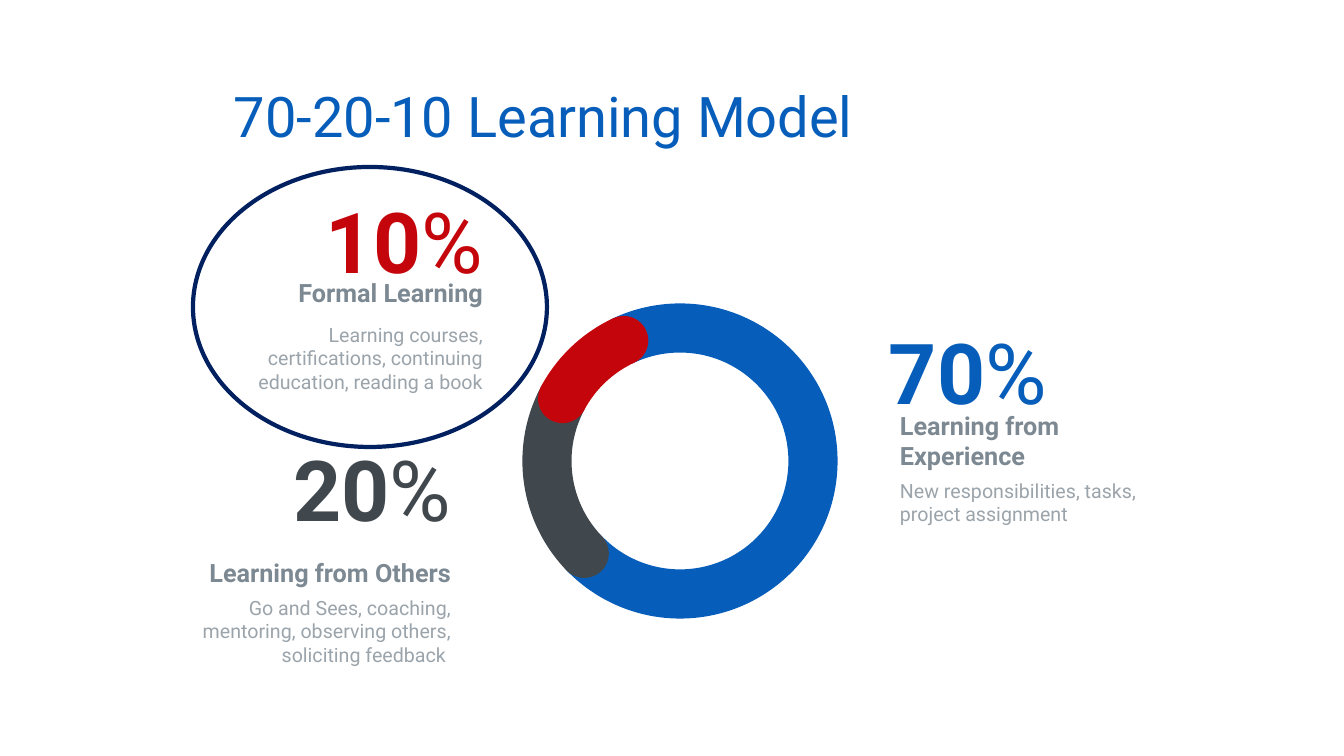
from math import cos, radians, sin, tan

from lxml import etree
from pptx import Presentation
from pptx import util as u
from pptx.dml.color import RGBColor
from pptx.enum import shapes, text
from pptx.oxml.ns import qn

BLUE, RED, CHARCOAL, NAVY = "065DBA", "C5050C", "41484D", "002060"
HEADING_GREY, BODY_GREY = "7D8992", "9BA4AB"
LEFT, RIGHT = text.PP_ALIGN.LEFT, text.PP_ALIGN.RIGHT
TOP, MIDDLE, BOTTOM = text.MSO_ANCHOR.TOP, text.MSO_ANCHOR.MIDDLE, text.MSO_ANCHOR.BOTTOM

STAT_WIDTH = 259
RING_CENTRE = (680, 461)
RING_RADIUS = 133
RING_HALF_WIDTH = 23

# start and end angle in degrees, clockwise from the right; colour
RING_ARCS = [(245, 496, BLUE), (136, 208, CHARCOAL), (208, 245, RED)]

# number, colour, alignment, (left, top) of the number, heading and its
# (left, top, height), body and its (left, top, height)
STATS = [
    ("70", BLUE, LEFT, (889, 321), "Learning from Experience", (900, 404, 72),
     "New responsibilities, tasks, project assignment", (900, 473, 58)),
    ("20", CHARCOAL, RIGHT, (192, 438), "Learning from Others", (192, 521, 72),
     "Go and Sees, coaching, mentoring, observing others, soliciting feedback ",
     (192, 590, 82)),
    ("10", RED, RIGHT, (224, 190), "Formal Learning", (224, 273, 40),
     "Learning courses, certifications, continuing education, reading a book",
     (224, 317, 82)),
]


def px(length):
    """Turn slide pixels (100.8 to the inch) into EMU."""
    return u.Emu(round(length * 914400 / 100.8))


def colour(hex_string):
    return RGBColor.from_string(hex_string)


def ring_point(radius, degrees, centre=RING_CENTRE):
    angle = radians(degrees)
    return centre[0] + radius * cos(angle), centre[1] + radius * sin(angle)


def arc_curves(radius, start, end, centre=RING_CENTRE):
    """Bezier curves (two controls and an end) along an arc, split at each quarter turn."""
    low, high = sorted((start, end))
    stops = [low, *(turn for turn in range(0, 721, 90) if low < turn < high), high]
    if end < start:
        stops.reverse()
    curves = []
    for first, last in zip(stops, stops[1:]):
        reach = 4 / 3 * tan(radians(last - first) / 4) * radius
        x1, y1 = ring_point(radius, first, centre)
        x2, y2 = ring_point(radius, last, centre)
        dx1, dy1 = ring_point(reach, first + 90, (0, 0))
        dx2, dy2 = ring_point(reach, last + 90, (0, 0))
        curves.append([(x1 + dx1, y1 + dy1), (x2 - dx2, y2 - dy2), (x2, y2)])
    return curves


def segment_curves(start, end):
    """Outline of a thick arc with a half-circle cap at each end."""
    outer, inner = RING_RADIUS + RING_HALF_WIDTH, RING_RADIUS - RING_HALF_WIDTH
    start_cap, end_cap = (ring_point(RING_RADIUS, angle) for angle in (start, end))
    return (arc_curves(outer, start, end)
            + arc_curves(RING_HALF_WIDTH, end, end + 180, end_cap)
            + arc_curves(inner, end, start)
            + arc_curves(RING_HALF_WIDTH, start + 180, start + 360, start_cap))


def bend_lines(shape, curves):
    """Turn each straight segment of a freeform into its Bezier curve."""
    for line, curve in zip(list(shape._element.iter(qn("a:lnTo"))), curves):
        bezier = etree.Element(qn("a:cubicBezTo"))
        for x, y in curve:
            etree.SubElement(bezier, qn("a:pt"), x=str(px(x) - shape.left),
                             y=str(px(y) - shape.top))
        line.getparent().replace(line, bezier)


class SlideBuilder:
    font_name = "Roboto"

    def __init__(self, presentation):
        self.slide = presentation.slides.add_slide(presentation.slide_layouts[5])
        self.shapes = self.slide.shapes

    def format_run(self, run, size, hex_string, bold=False):
        run.font.name = self.font_name
        run.font.size = u.Pt(size)
        run.font.bold = bold
        run.font.color.rgb = colour(hex_string)

    def title(self, words, left, top, width, height, indent):
        shape = self.shapes.title
        shape.left, shape.top, shape.width, shape.height = map(px, (left, top, width, height))
        frame = shape.text_frame
        frame.text = words
        frame.auto_size = text.MSO_AUTO_SIZE.NONE
        frame.vertical_anchor = MIDDLE
        frame.margin_left = px(indent)
        paragraph = frame.paragraphs[0]
        paragraph.alignment = LEFT
        paragraph.line_spacing = 0.9
        self.format_run(paragraph.runs[0], 40, BLUE)

    def text_box(self, box, words, size, hex_string, bold, alignment, anchor, margin=5):
        """Add a one-paragraph box and return its paragraph."""
        frame = self.shapes.add_textbox(*map(px, box)).text_frame
        frame.text = words
        frame.word_wrap = True
        frame.vertical_anchor = anchor
        frame.margin_left = frame.margin_right = 0
        frame.margin_top = frame.margin_bottom = px(margin)
        paragraph = frame.paragraphs[0]
        paragraph.alignment = alignment
        self.format_run(paragraph.runs[0], size, hex_string, bold)
        return paragraph

    def stat(self, number, hex_string, alignment, number_at, heading, heading_at, body, body_at):
        for words, place, size, shade, bold, anchor in (
                (body, body_at, 14, BODY_GREY, False, MIDDLE),
                (heading, heading_at, 18, HEADING_GREY, True, BOTTOM)):
            left, top, height = place
            self.text_box((left, top, STAT_WIDTH, height), words, size, shade, bold,
                          alignment, anchor)
        paragraph = self.text_box((*number_at, STAT_WIDTH, 102), number, 60, hex_string,
                                  True, alignment, TOP, margin=0)
        percent = paragraph.add_run()
        percent.text = "%"
        self.format_run(percent, 60, hex_string)

    def outline(self, shape, hex_string, weight):
        shape.shadow.inherit = False
        shape.line.color.rgb = colour(hex_string)
        shape.line.width = u.Pt(weight)

    def ring_arc(self, start, end, hex_string):
        curves = segment_curves(start, end)
        corners = [(px(x), px(y)) for *_, (x, y) in curves]
        builder = self.shapes.build_freeform(*corners[-1])
        builder.add_line_segments(corners, close=True)
        shape = builder.convert_to_shape()
        bend_lines(shape, curves)
        shape.fill.solid()
        shape.fill.fore_color.rgb = colour(hex_string)
        self.outline(shape, hex_string, 2.25)

    def ellipse(self, left, top, width, height, hex_string):
        box = map(px, (left, top, width, height))
        shape = self.shapes.add_shape(shapes.MSO_SHAPE.OVAL, *box)
        shape.fill.background()
        self.outline(shape, hex_string, 3)


def main():
    presentation = Presentation()
    presentation.slide_width, presentation.slide_height = px(1344), px(756)
    builder = SlideBuilder(presentation)
    builder.title("70-20-10 Learning Model", 122, 52, 1129, 134, indent=112)
    for arc in RING_ARCS:
        builder.ring_arc(*arc)
    for stat in STATS:
        builder.stat(*stat)
    builder.ellipse(193, 167, 354, 280, NAVY)
    presentation.save("out.pptx")


if __name__ == "__main__":
    main()
